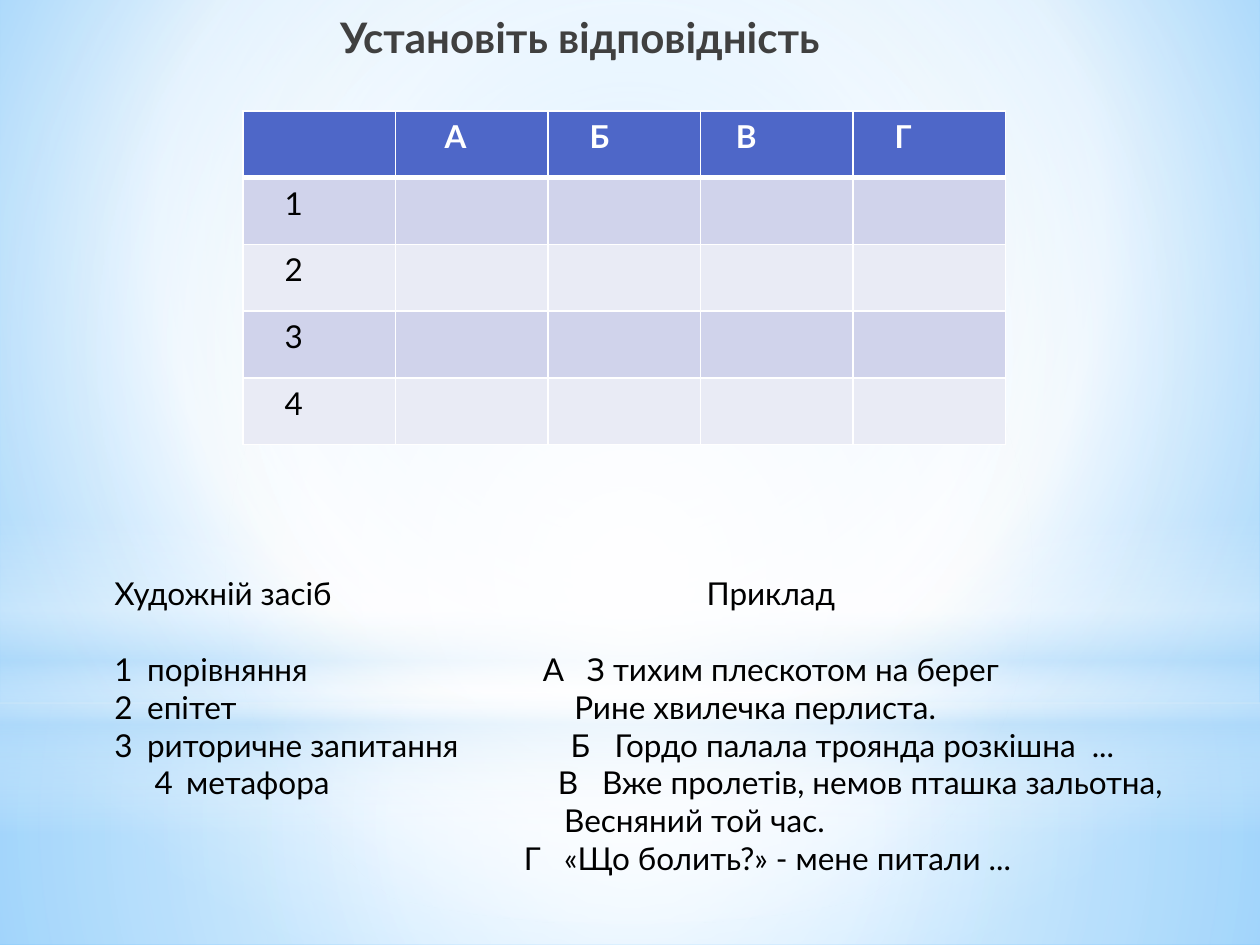
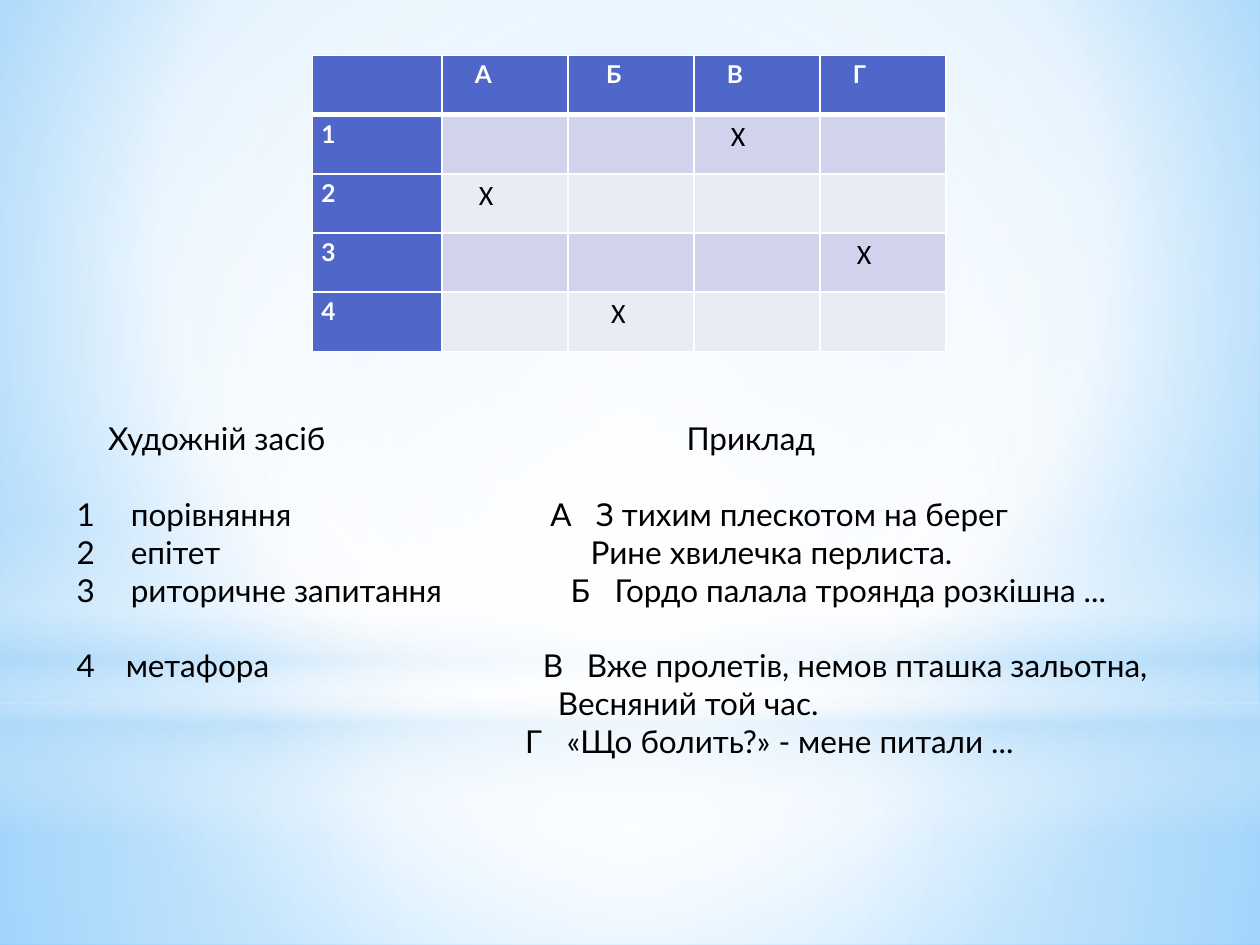
from dataclasses import dataclass
from typing import Any, Optional

import pptx
import pptx.dml.color
import pptx.enum.shapes
import pptx.enum.text
import pptx.oxml
import pptx.oxml.ns
import pptx.util

Inches = pptx.util.Inches
Pt = pptx.util.Pt
RGBColor = pptx.dml.color.RGBColor
SHAPE = pptx.enum.shapes.MSO_SHAPE
TOP = pptx.enum.text.MSO_ANCHOR.TOP
LEFT = pptx.enum.text.PP_ALIGN.LEFT
NO_AUTOFIT = pptx.enum.text.MSO_AUTO_SIZE.NONE
qn = pptx.oxml.ns.qn

WHITE = RGBColor(0xFF, 0xFF, 0xFF)
BLACK = RGBColor(0x00, 0x00, 0x00)
TITLE_GREY = RGBColor(0x40, 0x40, 0x40)
HEADER_BLUE = RGBColor(0x4E, 0x67, 0xC8)
ROW_DARK = RGBColor(0xD0, 0xD3, 0xEB)
ROW_LIGHT = RGBColor(0xE9, 0xEB, 0xF5)
SKY = RGBColor(0x9E, 0xD5, 0xFF)
SKY_DEEP = RGBColor(0x5B, 0xB9, 0xFF)
HAZE = RGBColor(0xB4, 0xDC, 0xFA)

FONT = "Lato"
MARK_FONT = "Calibri"
BLANK_LINE = 21.6
CENTRE = (50, 50, 50, 50)

Box = tuple[float, float, float, float]
Stop = tuple[int, RGBColor, int]  # position, colour, opacity


@dataclass(frozen=True)
class Glow:
    shape: Any
    box: Box
    stops: list[Stop]
    focus: Optional[Box] = CENTRE  # None: a vertical linear gradient


@dataclass(frozen=True)
class Entry:
    text: str
    indent: float
    size: int
    font: str = FONT


@dataclass(frozen=True)
class AnswerGrid:
    left: float
    top: float
    columns: list[float]
    row_height: float
    entries: dict[tuple[int, int], Entry]
    inset: float
    line_spacing: float = 1.0
    numbers_in_header_style: bool = False


@dataclass(frozen=True)
class Line:
    phrases: list[tuple[float, str]]  # tab position, text
    space_before: float = 0


GLOWS = [
    Glow(SHAPE.RECTANGLE, (0, 5.58, 10, 1.92), [(0, WHITE, 91), (37, WHITE, 76), (100, HAZE, 79)]),
    Glow(SHAPE.RECTANGLE, (0, 0, 10, 5.58), [(0, WHITE, 89), (48, WHITE, 62), (100, HAZE, 79)]),
    Glow(SHAPE.RECTANGLE, (0, 4.12, 10, 2.5),
         [(0, WHITE, 0), (29, WHITE, 30), (45, HAZE, 40), (55, WHITE, 26), (65, HAZE, 60),
          (100, WHITE, 0)], None),
    Glow(SHAPE.OVAL, (0, 1.75, 10, 5.58), [(0, WHITE, 100), (56, WHITE, 0)]),
]

TASK_GRID = AnswerGrid(
    1.93, 0.88, [1.21] * 5, 0.53,
    {(0, column): Entry(letter, indent, 18)
     for column, (letter, indent) in enumerate(zip("АБВГ", (0.39, 0.33, 0.28, 0.33)), 1)}
    | {(row, 0): Entry(str(row), 0.33, 18) for row in range(1, 5)},
    inset=0.05,
)
SOLUTION_GRID = AnswerGrid(
    2.48, 0.44, [1.03] + [1] * 4, 0.47,
    {(0, column): Entry(letter, indent, 14)
     for column, (letter, indent) in enumerate(zip("АБВГ", (0.26, 0.3, 0.26, 0.26)), 1)}
    | {(row, 0): Entry(str(row), 0.07, 14) for row in range(1, 5)}
    | {(row, column): Entry("Х", indent, 16, MARK_FONT)
       for row, column, indent in ((1, 3, 0.29), (2, 1, 0.29), (3, 4, 0.29), (4, 2, 0.34))},
    inset=0, line_spacing=1.15, numbers_in_header_style=True,
)

TASK_LINES = [
    Line([(0, "Художній засіб"), (4.7, "Приклад")]),
    Line([(0, "1"), (0.26, "порівняння"), (3.4, "А"), (3.75, "З тихим плескотом на берег")],
         BLANK_LINE),
    Line([(0, "2"), (0.26, "епітет"), (3.65, "Рине хвилечка перлиста.")]),
    Line([(0, "3"), (0.26, "риторичне запитання"), (3.62, "Б"),
          (3.97, "Гордо палала троянда розкішна  ...")]),
    Line([(0.32, "4"), (0.57, "метафора"), (3.52, "В"),
          (3.87, "Вже пролетів, немов пташка зальотна,")]),
    Line([(3.57, "Весняний той час.")]),
    Line([(3.25, "Г"), (3.57, "«Що болить?» - мене питали ...")]),
]
SOLUTION_LINES = [
    Line([(0.25, "Художній засіб"), (4.84, "Приклад")]),
    Line([(0, "1"), (0.43, "порівняння"), (3.76, "А"), (4.12, "З тихим плескотом на берег")],
         BLANK_LINE),
    Line([(0, "2"), (0.43, "епітет"), (4.08, "Рине хвилечка перлиста.")]),
    Line([(0, "3"), (0.43, "риторичне запитання"), (3.92, "Б"),
          (4.27, "Гордо палала троянда розкішна ...")]),
    Line([(0, "4"), (0.39, "метафора"), (3.7, "В"),
          (4.05, "Вже пролетів, немов пташка зальотна,")], BLANK_LINE),
    Line([(3.82, "Весняний той час.")]),
    Line([(3.56, "Г"), (3.89, "«Що болить?» - мене питали ...")]),
]


def apply_format(target: Any, values: dict[str, Any]) -> None:
    for name, value in values.items():
        setattr(target, name, value)


def format_font(font: Any, size: int, color: RGBColor, bold: bool = False,
                name: str = FONT) -> None:
    apply_format(font, {"name": name, "size": Pt(size), "bold": bold})
    font.color.rgb = color


def inches(box: Box) -> list[int]:
    return [Inches(length) for length in box]


def add_xml(parent: Any, xml: str) -> Any:
    """Append a DrawingML element, written with the a: prefix."""
    tag_end = min(xml.index(mark) for mark in " />" if mark in xml)
    declared = f"{xml[:tag_end]} {pptx.oxml.ns.nsdecls('a')}{xml[tag_end:]}"
    element = pptx.oxml.parse_xml(declared)
    parent.append(element)
    return element


def set_gradient(properties: Any, stops: list[Stop], focus: Optional[Box]) -> None:
    """Replace the solid fill of the properties by a gradient."""
    stop_xml = "".join(
        f'<a:gs pos="{position * 1000}"><a:srgbClr val="{color}">'
        f'<a:alpha val="{opacity * 1000}"/></a:srgbClr></a:gs>'
        for position, color, opacity in stops)
    direction = '<a:lin ang="5400000" scaled="0"/>'
    if focus:
        sides = " ".join(f'{side}="{value * 1000}"' for side, value in zip("ltrb", focus))
        direction = f'<a:path path="circle"><a:fillToRect {sides}/></a:path>'
    gradient = add_xml(properties, f'<a:gradFill rotWithShape="1"><a:gsLst>{stop_xml}</a:gsLst>'
                                   f"{direction}</a:gradFill>")
    properties.replace(properties.find(qn("a:solidFill")), gradient)


def build_master(master: Any, slide: Any) -> None:
    """Give the master its sky and its glows, drawn on a slide and moved over."""
    master.background.fill.solid()
    set_gradient(master.element.find(".//" + qn("p:bgPr")),
                 [(0, SKY, 100), (60, WHITE, 100), (100, SKY_DEEP, 100)], (20, 10, 20, 60))
    for order, glow in enumerate(GLOWS):
        shape = slide.shapes.add_shape(glow.shape, *inches(glow.box))
        shape.shadow.inherit = False
        shape.line.fill.background()
        shape.fill.solid()
        set_gradient(shape.element.spPr, glow.stops, glow.focus)
        master.shapes.element.insert(2 + order, shape.element)


def set_borders(cell: Any, row: int) -> None:
    properties = cell._tc.get_or_add_tcPr()
    heavy_side = {0: "B", 1: "T"}.get(row)
    for order, side in enumerate("LRTB"):
        width = Pt(3 if side == heavy_side else 1)
        border = add_xml(properties, f'<a:ln{side} w="{width}"><a:solidFill>'
                                     f'<a:srgbClr val="{WHITE}"/></a:solidFill></a:ln{side}>')
        properties.insert(order, border)


def add_answer_grid(slide: Any, grid: AnswerGrid) -> None:
    rows = 5
    box = (grid.left, grid.top, sum(grid.columns), grid.row_height * rows)
    table = slide.shapes.add_table(rows, len(grid.columns), *inches(box)).table
    table.horz_banding = False
    for column, width in zip(table.columns, grid.columns):
        column.width = Inches(width)
    for row in range(rows):
        table.rows[row].height = Inches(grid.row_height)
        for column in range(len(grid.columns)):
            cell = table.cell(row, column)
            is_header = row == 0 or (column == 0 and grid.numbers_in_header_style)
            cell.fill.solid()
            cell.fill.fore_color.rgb = (
                HEADER_BLUE if is_header else ROW_DARK if row % 2 else ROW_LIGHT)
            set_borders(cell, row)
            entry = grid.entries.get((row, column))
            if entry is None:
                continue
            apply_format(cell, {
                "margin_left": Inches(entry.indent), "margin_right": Inches(0.07),
                "margin_top": Inches(grid.inset), "margin_bottom": Inches(grid.inset)})
            paragraph = cell.text_frame.paragraphs[0]
            paragraph.line_spacing = grid.line_spacing
            run = paragraph.add_run()
            run.text = entry.text
            format_font(run.font, entry.size, WHITE if is_header else BLACK, is_header, entry.font)


def add_matching_list(slide: Any, box: Box, lines: list[Line], margin_top: float = 0.05) -> None:
    frame = slide.shapes.add_textbox(*inches(box)).text_frame
    apply_format(frame, {"word_wrap": True, "auto_size": NO_AUTOFIT, "vertical_anchor": TOP,
                         "margin_top": Inches(margin_top)})
    for order, line in enumerate(lines):
        paragraph = frame.add_paragraph() if order else frame.paragraphs[0]
        apply_format(paragraph, {"alignment": LEFT, "space_before": Pt(line.space_before)})
        tabs = "".join(f'<a:tab pos="{Inches(position)}" algn="l"/>'
                       for position, _ in line.phrases if position)
        add_xml(paragraph._p.get_or_add_pPr(), f"<a:tabLst>{tabs}</a:tabLst>")
        run = paragraph.add_run()
        run.text = "".join(("\t" if position else "") + text for position, text in line.phrases)
        format_font(run.font, 18, BLACK)


def set_title(slide: Any, text: str) -> None:
    title = slide.shapes.title
    left, top, width, height = inches((1.3, 0.04, 7.12, 1.25))
    apply_format(title, {"left": left, "top": top, "width": width, "height": height})
    frame = title.text_frame
    apply_format(frame, {"word_wrap": True, "auto_size": NO_AUTOFIT, "vertical_anchor": TOP,
                         "margin_left": Inches(1.4)})
    paragraph = frame.paragraphs[0]
    paragraph.alignment = LEFT
    run = paragraph.add_run()
    run.text = text
    format_font(run.font, 24, TITLE_GREY, bold=True)


def main() -> None:
    deck = pptx.Presentation()
    deck.slide_width, deck.slide_height = Inches(10), Inches(7.5)
    title_only, blank = deck.slide_layouts[5], deck.slide_layouts[6]

    # Task: match devices with examples
    task = deck.slides.add_slide(title_only)
    build_master(deck.slide_master, task)
    set_title(task, "Установіть відповідність")
    add_answer_grid(task, TASK_GRID)
    add_matching_list(task, (0.81, 3.91, 8.9, 3.13), TASK_LINES, margin_top=0.65)

    # Solution: the same grid with the answers marked
    solution = deck.slides.add_slide(blank)
    add_matching_list(solution, (0.51, 3.28, 9.21, 3.8), SOLUTION_LINES)
    add_answer_grid(solution, SOLUTION_GRID)

    deck.save("out.pptx")


if __name__ == "__main__":
    main()
